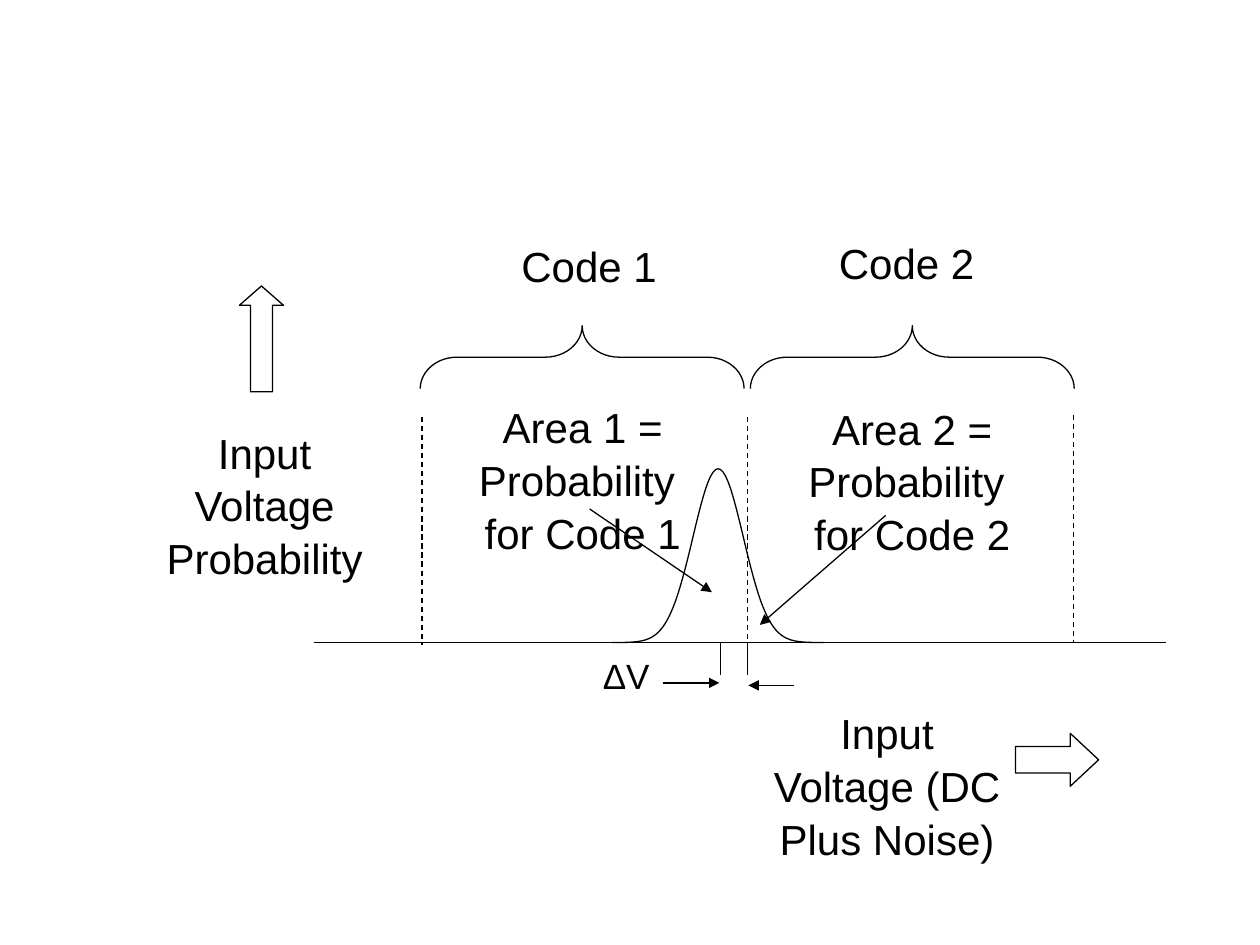
from math import exp

from pptx import Presentation
from pptx.dml.color import RGBColor
from pptx.enum.dml import MSO_LINE
from pptx.enum.shapes import MSO_CONNECTOR, MSO_SHAPE
from pptx.enum.text import MSO_ANCHOR, PP_ALIGN
from pptx.oxml.ns import qn
from pptx.util import Inches, Pt

BLACK, WHITE = "000000", "FFFFFF"


def color(hex_text):
    return RGBColor.from_string(hex_text)


def outline(shape, fill=None):
    shape.shadow.inherit = False
    shape.line.color.rgb = color(BLACK)
    shape.line.width = Pt(0.75)
    if fill:
        shape.fill.solid()
        shape.fill.fore_color.rgb = color(fill)
    else:
        shape.fill.background()


deck = Presentation()
deck.slide_width, deck.slide_height = Inches(10), Inches(7.5)
page = deck.slides.add_slide(deck.slide_layouts[6])

# Noise distribution: two mirrored halves of a bell curve on the axis
peak_x, axis_y, height, sigma = 5.7, 5.1, 1.38, 0.2
reach, steps = 0.84, 42
for side in (-1, 1):
    points = []
    for step in range(steps + 1):
        offset = reach * step / steps
        level = height * exp(-((offset / sigma) ** 2) / 2)
        points.append((Inches(peak_x + side * offset), Inches(axis_y - level)))
    builder = page.shapes.build_freeform(*points[0])
    builder.add_line_segments(points[1:], close=False)
    outline(builder.convert_to_shape())

# Axis, code boundaries, offset ticks and pointers: x1, y1, x2, y2, style
lines = [
    (2.49, axis_y, 9.25, axis_y, "plain"),
    (3.35, 3.31, 3.35, 5.12, "dash"),
    (5.93, 3.31, 5.93, 5.12, "dash"),
    (8.52, 3.29, 8.52, axis_y, "dash"),
    (5.72, axis_y, 5.72, 5.36, "plain"),
    (5.93, axis_y, 5.93, 5.36, "plain"),
    (4.68, 4.04, 5.65, 4.7, "arrow"),
    (7.03, 4.09, 6.03, 4.96, "arrow"),
    (5.26, 5.42, 5.71, 5.42, "arrow"),
    (6.3, 5.44, 5.94, 5.44, "arrow"),
]
for x1, y1, x2, y2, style in lines:
    line = page.shapes.add_connector(
        MSO_CONNECTOR.STRAIGHT, Inches(x1), Inches(y1), Inches(x2), Inches(y2))
    line.line.color.rgb = color(BLACK)
    line.line.width = Pt(0.75)
    if style == "dash":
        line.line.dash_style = MSO_LINE.DASH
    elif style == "arrow":
        stroke = line.line._get_or_add_ln()
        stroke.append(stroke.makeelement(qn("a:tailEnd"), {"type": "triangle"}))
    properties = line._element.spPr
    properties.append(properties.makeelement(qn("a:effectLst"), {}))

# Braces over the two codes and the axis direction arrows
symbols = [
    (MSO_SHAPE.LEFT_BRACE, 4.37, 1.55, 0.5, 2.57, (0.585, 0.5), 90, None),
    (MSO_SHAPE.LEFT_BRACE, 6.99, 1.55, 0.5, 2.57, (0.585, 0.5), 90, None),
    (MSO_SHAPE.UP_ARROW, 1.9, 2.27, 0.35, 0.84, (0.5, 0.438), 0, WHITE),
    (MSO_SHAPE.RIGHT_ARROW, 8.06, 5.82, 0.66, 0.42, (0.5, 0.536), 0, WHITE),
]
for kind, left, top, width, tall, adjustments, rotation, fill in symbols:
    symbol = page.shapes.add_shape(
        kind, Inches(left), Inches(top), Inches(width), Inches(tall))
    for index, value in enumerate(adjustments):
        symbol.adjustments[index] = value
    symbol.rotation = rotation
    outline(symbol, fill)

# Labels: left, top, width, height, size, paragraphs
labels = [
    (3.88, 1.84, 1.59, 0.77, 24, ["Code 1"]),
    (6.4, 1.82, 1.59, 0.63, 24, ["Code 2"]),
    (3.26, 3.12, 2.73, 1.01, 24, ["Area 1 = Probability ", "for Code 1"]),
    (5.86, 3.13, 2.76, 1.01, 24, ["Area 2 = Probability ", "for Code 2"]),
    (1.08, 3.32, 2.04, 1.32, 24, ["Input Voltage Probability"]),
    (6.02, 5.55, 2.04, 1.03, 24, ["Input Voltage (DC Plus Noise)"]),
    (4.68, 5.13, 0.58, 0.71, 20, ["ΔV"]),
]
for left, top, width, tall, size, texts in labels:
    box = page.shapes.add_textbox(
        Inches(left), Inches(top), Inches(width), Inches(tall))
    frame = box.text_frame
    frame.word_wrap = width > 1
    frame.vertical_anchor = MSO_ANCHOR.TOP
    frame.text = "\n".join(texts)
    for para in frame.paragraphs:
        para.alignment = PP_ALIGN.CENTER
        para.line_spacing = 1.05
        para.font.name = "Arial"
        para.font.size = Pt(size)
        para.font.color.rgb = color(BLACK)

deck.save("out.pptx")
